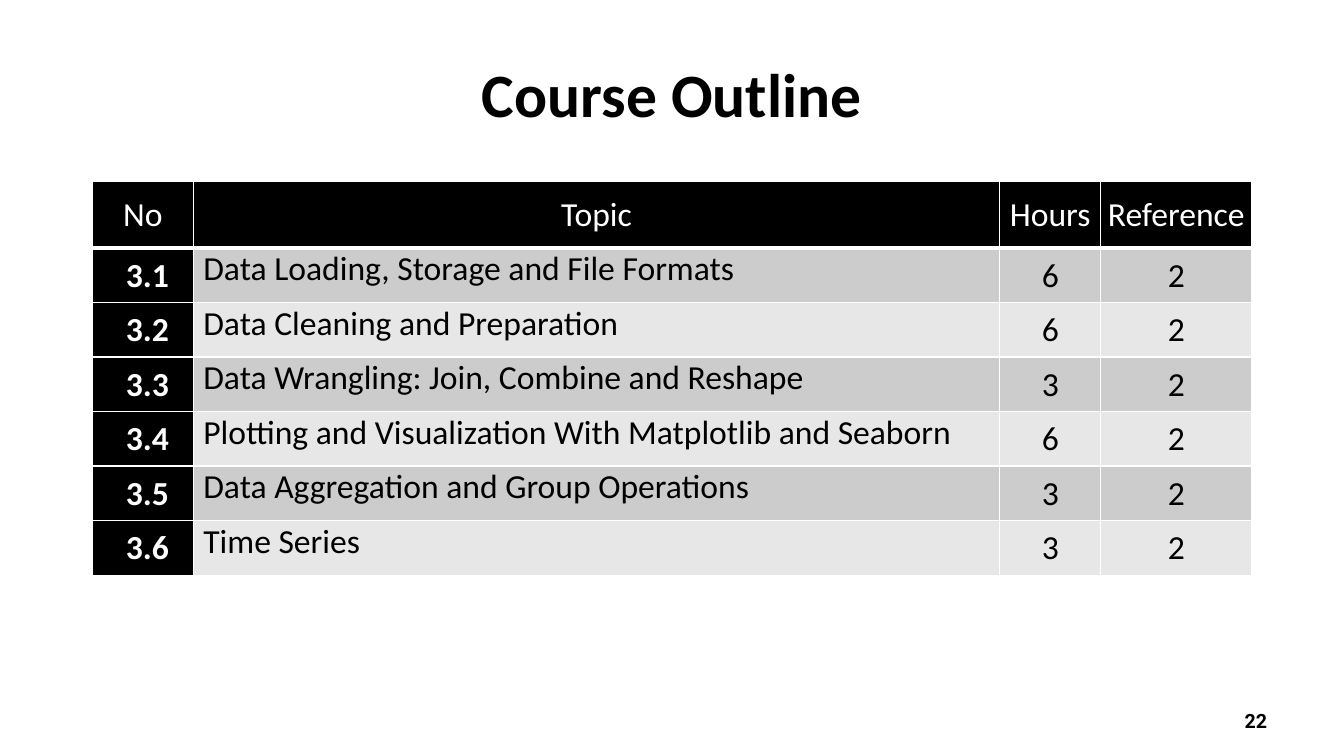
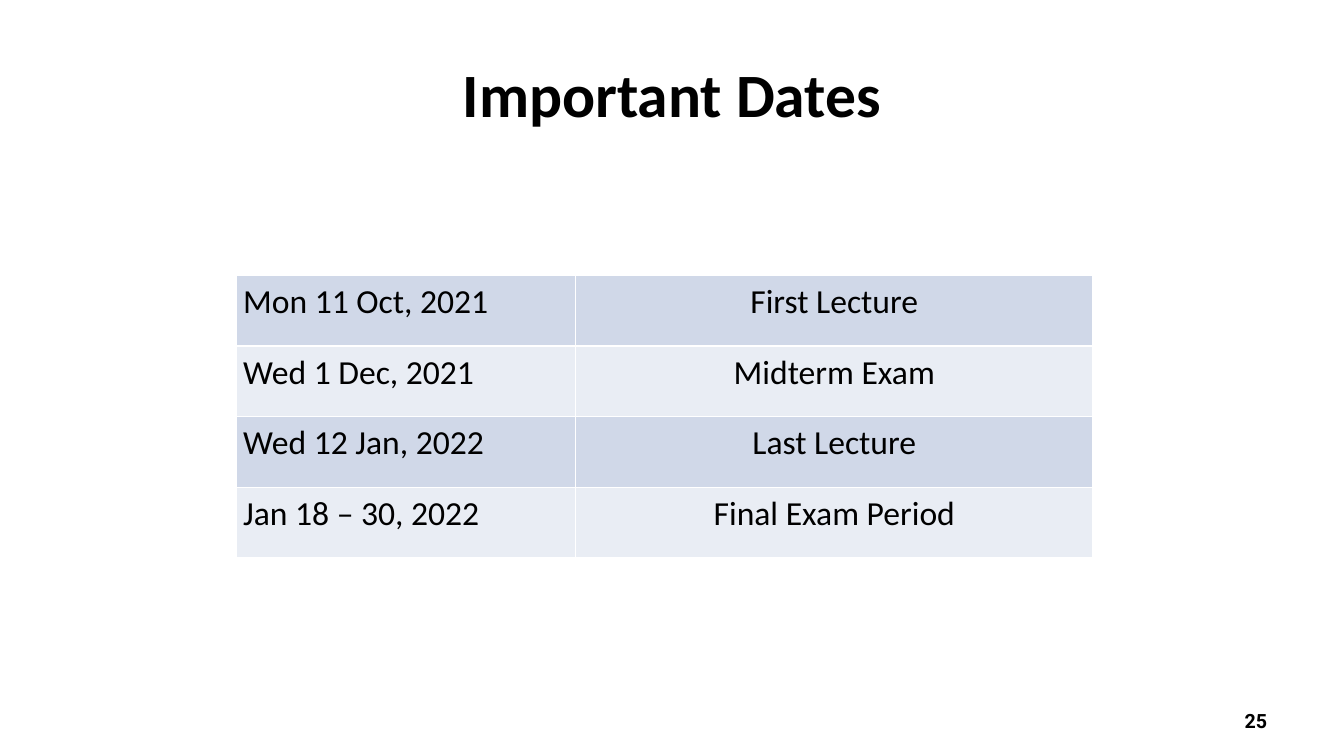
from dataclasses import dataclass

from lxml.etree import SubElement
from pptx import Presentation
from pptx.dml.color import RGBColor
from pptx.enum.text import MSO_ANCHOR, PP_ALIGN
from pptx.oxml.ns import qn
from pptx.util import Inches, Length, Pt

COLORS = {
    "black": "000000", "white": "FFFFFF",
    "gray": "CCCCCC", "light_gray": "E7E7E7",
    "blue": "D0D8E8", "light_blue": "E9EDF4",
}
UNIT = Inches(1 / 12)  # grid of 160 columns by 90 rows
BODY_FONT, NUMBER_FONT = "Calibri", "Roboto"


@dataclass(frozen=True)
class Box:
    col: float
    row: float
    cols: float
    rows: float


@dataclass(frozen=True)
class TextStyle:
    size: int = 24
    bold: bool = False
    color: str = "black"
    font: str = BODY_FONT
    align: PP_ALIGN = PP_ALIGN.CENTER
    spacing: float = 1.0


@dataclass(frozen=True)
class CellStyle:
    text: TextStyle
    insets: tuple[float, float, float, float]  # left, top, right, bottom in inches
    anchor: MSO_ANCHOR = MSO_ANCHOR.MIDDLE
    fill: str | None = None  # None takes the band colour of the row
    bottom_border: int = 1


@dataclass(frozen=True)
class TableSpec:
    col: float
    row: float
    widths: list[float]
    heights: list[float]
    rows: list[tuple[str, ...]]
    column_styles: list[CellStyle]
    bands: tuple[str, str]
    header: CellStyle | None = None


@dataclass(frozen=True)
class SlideSpec:
    title: str
    number: str
    table: TableSpec


TITLE_BOX = Box(8, 3.6, 144, 15)
NUMBER_BOX = Box(114.7, 83.4, 37.3, 4.8)
TITLE_STYLE = TextStyle(size=44, bold=True)
NUMBER_STYLE = TextStyle(size=14, bold=True, font=NUMBER_FONT, align=PP_ALIGN.RIGHT)

TIGHT = (0.01, 0.01, 0.01, 0)
INDENTED = (0.1, 0.01, 0.01, 0)
SIDES = (0.07, 0, 0.07, 0)

HEADER = CellStyle(TextStyle(color="white"), TIGHT, fill="black", bottom_border=3)
ROW_NUMBER = CellStyle(TextStyle(bold=True, color="white"), INDENTED, fill="black")
TOPIC = CellStyle(TextStyle(align=PP_ALIGN.LEFT), INDENTED, MSO_ANCHOR.TOP)
FIGURE = CellStyle(TextStyle(), TIGHT)
DATE = CellStyle(TextStyle(align=PP_ALIGN.LEFT, spacing=1.15), SIDES, MSO_ANCHOR.TOP)
EVENT = CellStyle(TextStyle(spacing=1.15), SIDES, MSO_ANCHOR.TOP)

OUTLINE = TableSpec(
    col=11, row=21.6,
    widths=[12, 96, 12, 18],
    heights=[7.9] + [6.5] * 6,
    rows=[
        ("No", "Topic", "Hours", "Reference"),
        ("3.1", "Data Loading, Storage and File Formats", "6", "2"),
        ("3.2", "Data Cleaning and Preparation", "6", "2"),
        ("3.3", "Data Wrangling: Join, Combine and Reshape", "3", "2"),
        ("3.4", "Plotting and Visualization With Matplotlib and Seaborn", "6", "2"),
        ("3.5", "Data Aggregation and Group Operations", "3", "2"),
        ("3.6", "Time Series", "3", "2"),
    ],
    column_styles=[ROW_NUMBER, TOPIC, FIGURE, FIGURE],
    bands=("gray", "light_gray"),
    header=HEADER,
)
DATES = TableSpec(
    col=28.1, row=32.8,
    widths=[40.4, 61.6],
    heights=[8.4] * 4,
    rows=[
        ("Mon 11 Oct, 2021", "First Lecture"),
        ("Wed 1 Dec, 2021", "Midterm Exam"),
        ("Wed 12 Jan, 2022", "Last Lecture"),
        ("Jan 18 – 30, 2022", "Final Exam Period"),
    ],
    column_styles=[DATE, EVENT],
    bands=("blue", "light_blue"),
)
SLIDES = [
    SlideSpec("Course Outline", "22", OUTLINE),
    SlideSpec("Important Dates", "25", DATES),
]


def grid(units: float) -> Length:
    return Length(round(units * UNIT))


def rgb(name: str) -> RGBColor:
    return RGBColor.from_string(COLORS[name])


def write(tf, text: str, style: TextStyle) -> None:
    tf.text = text
    p = tf.paragraphs[0]
    p.alignment = style.align
    p.line_spacing = style.spacing
    font = p.runs[0].font
    font.name, font.size, font.bold = style.font, Pt(style.size), style.bold
    font.color.rgb = rgb(style.color)


def add_text(slide, box: Box, text: str, style: TextStyle) -> None:
    sp = slide.shapes.add_textbox(
        grid(box.col), grid(box.row), grid(box.cols), grid(box.rows))
    tf = sp.text_frame
    tf.word_wrap = True
    tf.vertical_anchor = MSO_ANCHOR.MIDDLE
    write(tf, text, style)


def add_borders(cell, bottom: int) -> None:
    """Draw white cell borders; call before filling, as the schema wants lines first."""
    tc_pr = cell._tc.get_or_add_tcPr()
    for tag, width in (("lnL", 1), ("lnR", 1), ("lnT", 1), ("lnB", bottom)):
        line = SubElement(tc_pr, qn(f"a:{tag}"), w=str(Pt(width)))
        fill = SubElement(line, qn("a:solidFill"))
        SubElement(fill, qn("a:srgbClr"), val=COLORS["white"])


def format_cell(cell, text: str, style: CellStyle, band: str) -> None:
    left, top, right, bottom = (Inches(inset) for inset in style.insets)
    cell.margin_left, cell.margin_top = left, top
    cell.margin_right, cell.margin_bottom = right, bottom
    cell.vertical_anchor = style.anchor
    add_borders(cell, style.bottom_border)
    cell.fill.solid()
    cell.fill.fore_color.rgb = rgb(style.fill or band)
    write(cell.text_frame, text, style.text)


def add_table(slide, spec: TableSpec) -> None:
    table = slide.shapes.add_table(
        len(spec.rows), len(spec.widths), grid(spec.col), grid(spec.row),
        grid(sum(spec.widths)), grid(sum(spec.heights))).table
    table.first_row = table.horz_banding = False
    for column, width in zip(table.columns, spec.widths):
        column.width = grid(width)
    for row, height in zip(table.rows, spec.heights):
        row.height = grid(height)

    first_body_row = 1 if spec.header else 0
    for i, texts in enumerate(spec.rows):
        band = spec.bands[(i - first_body_row) % 2]
        for j, (text, column_style) in enumerate(zip(texts, spec.column_styles)):
            style = spec.header if spec.header and i == 0 else column_style
            format_cell(table.cell(i, j), text, style, band)


def main() -> None:
    prs = Presentation()
    prs.slide_width, prs.slide_height = Inches(13.33), Inches(7.5)
    for spec in SLIDES:
        slide = prs.slides.add_slide(prs.slide_layouts[6])
        add_text(slide, TITLE_BOX, spec.title, TITLE_STYLE)
        add_table(slide, spec.table)
        add_text(slide, NUMBER_BOX, spec.number, NUMBER_STYLE)
    prs.save("out.pptx")


if __name__ == "__main__":
    main()
